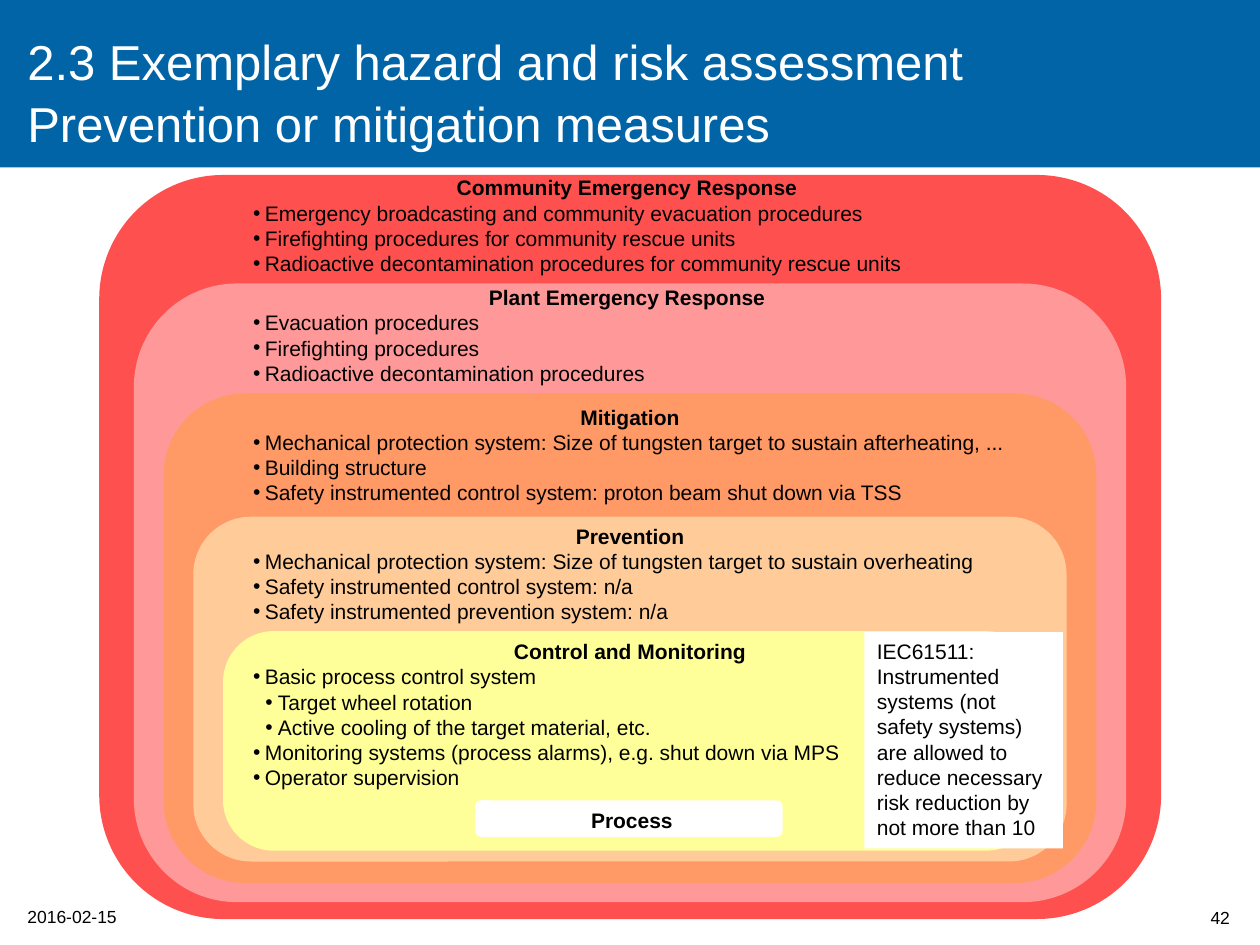
from dataclasses import dataclass

from lxml import etree
from pptx import Presentation
from pptx.dml.color import RGBColor as Rgb
from pptx.enum.shapes import MSO_SHAPE as Shape
from pptx.enum.text import MSO_ANCHOR as Anchor, PP_ALIGN as Align
from pptx.oxml.ns import qn
from pptx.util import Pt


@dataclass(frozen=True)
class Theme:
    font: str = "Arial"
    blue: str = "0064A6"
    white: str = "FFFFFF"
    black: str = "000000"
    title: int = 28
    body: int = 12
    small: int = 10


theme = Theme()

deck = Presentation()
deck.slide_width, deck.slide_height = Pt(720), Pt(540)
slide = deck.slides.add_slide(deck.slide_layouts[6])


def add_block(kind, box, fill):
    block = slide.shapes.add_shape(kind, *map(Pt, box))
    block.shadow.inherit = False
    block.fill.solid()
    block.fill.fore_color.rgb = Rgb.from_string(fill)
    block.line.fill.background()
    return block


def write(shape, text, size=theme.body, color=theme.black, align=Align.LEFT,
          anchor=Anchor.TOP, bold=False):
    """Fill a shape with text, one paragraph per line, and return the frame."""
    frame = shape.text_frame
    frame.word_wrap = True
    frame.vertical_anchor = anchor
    frame.text = text
    for para in frame.paragraphs:
        para.alignment = align
        for run in para.runs:
            run.font.name = theme.font
            run.font.size = Pt(size)
            run.font.bold = bold
            run.font.color.rgb = Rgb.from_string(color)
    return frame


# Header and footer
add_block(Shape.RECTANGLE, (0, 0, 720, 95.6), theme.blue)
title = slide.shapes.add_textbox(Pt(8.6), Pt(15.1), Pt(561.6), Pt(73.4))
frame = write(title, "2.3 Exemplary hazard and risk assessment\v"
              "Prevention or mitigation measures",
              theme.title, theme.white, anchor=Anchor.MIDDLE)
frame.paragraphs[0].line_spacing = 1.05

date = slide.shapes.add_textbox(Pt(8.6), Pt(514.1), Pt(118.8), Pt(19.4))
write(date, "2016-02-15", theme.small)
page = slide.shapes.add_textbox(Pt(658.1), Pt(509.8), Pt(51.8), Pt(28.8))
write(page, "42", theme.small, align=Align.RIGHT, anchor=Anchor.MIDDLE)

# Protection layers, outermost first: box, fill, text top, heading, (level, item)
layers = [
    ((56.7, 100, 606.8, 425.2), "FF5050", 96.5, "Community Emergency Response ", [
        (0, "Emergency broadcasting and community evacuation procedures"),
        (0, "Firefighting procedures for community rescue units"),
        (0, "Radioactive decontamination procedures for community rescue units")]),
    ((76.5, 162, 567, 353.5), "FF9999", 159.2, "Plant Emergency Response ", [
        (0, "Evacuation procedures"),
        (0, "Firefighting procedures"),
        (0, "Radioactive decontamination procedures")]),
    ((93.5, 224.8, 533, 279.8), "FF9966", 227.5, "Mitigation", [
        (0, "Mechanical protection system: Size of tungsten target "
            "to sustain afterheating, ..."),
        (0, "Building structure"),
        (0, "Safety instrumented control system: proton beam shut down via TSS")]),
    ((110.5, 295.3, 499, 197), "FFCC99", 295.5, "Prevention", [
        (0, "Mechanical protection system: Size of tungsten target "
            "to sustain overheating"),
        (0, "Safety instrumented control system: n/a"),
        (0, "Safety instrumented prevention system: n/a")]),
    ((127.5, 360.7, 465, 125.4), "FFFF99", 361.5, "Control and Monitoring", [
        (0, "Basic process control system"),
        (1, "Target wheel rotation"),
        (1, "Active cooling of the target material, etc."),
        (0, "Monitoring systems (process alarms), e.g. shut down via MPS"),
        (0, "Operator supervision")]),
]
indents = [(6.75, 6.75), (14.2, 7.2)]  # left margin, hang

for box, fill, *_ in layers:
    block = add_block(Shape.ROUNDED_RECTANGLE, box, fill)
block.adjustments[0] = 0.23

add_block(Shape.ROUNDED_RECTANGLE, (271.5, 457.3, 175.7, 20.9), theme.white)
label = slide.shapes.add_textbox(Pt(265), Pt(457.9), Pt(192.2), Pt(21.6))
write(label, "Process", align=Align.CENTER, bold=True)

for _, _, top, head, items in layers:
    high = 7.2 + 14.4 * (len(items) + 1)
    area = slide.shapes.add_textbox(Pt(137.5), Pt(top), Pt(445), Pt(high))
    lines = [head] + [item for _, item in items]
    first, *rest = write(area, "\n".join(lines)).paragraphs
    first.alignment = Align.CENTER
    first.runs[0].font.bold = True
    for para, (level, _) in zip(rest, items):
        left, hang = indents[level]
        props = para._p.get_or_add_pPr()
        props.set("marL", str(Pt(left)))
        props.set("indent", str(-Pt(hang)))
        etree.SubElement(props, qn("a:buFont"), typeface=theme.font)
        etree.SubElement(props, qn("a:buChar"), char="•")

# Note on the standard
note = add_block(Shape.RECTANGLE, (494, 361.2, 113.4, 123.6), theme.white)
write(note, "IEC61511:\nInstrumented systems (not safety systems) are allowed to "
      "reduce necessary risk reduction by not more than 10")

deck.save("out.pptx")
